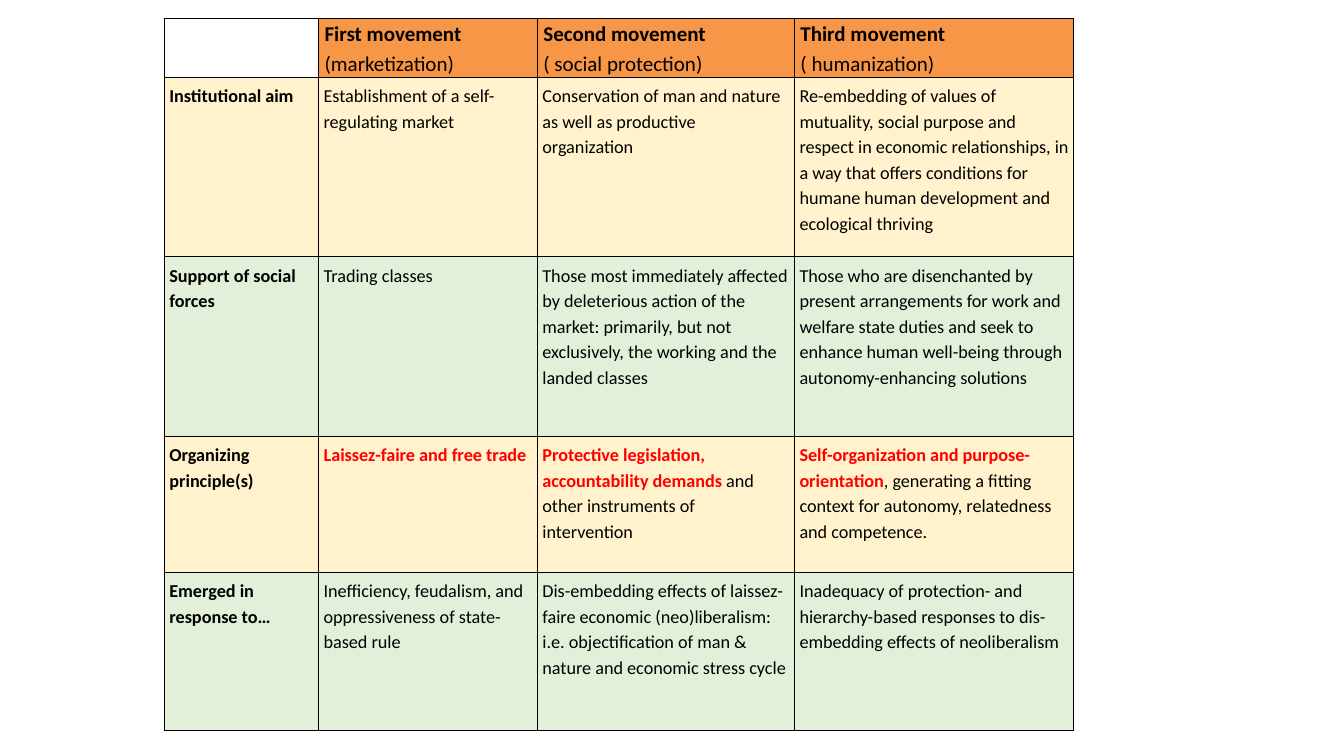
from lxml import etree
from pptx import Presentation
from pptx.dml.color import RGBColor
from pptx.oxml.ns import qn
from pptx.util import Inches, Pt

BLACK, RED, WHITE = "000000", "FF0000", "FFFFFF"
ORANGE, CREAM, GREEN = "F79646", "FFF2CC", "E2F0D9"

COLUMN_WIDTHS = [1.53, 2.17, 2.55, 2.77]
ROW_HEIGHTS = [0.58, 1.78, 1.78, 1.35, 1.57]

# Each header is a list of paragraphs; "|" parts the bold lead from the plain rest.
HEADERS = [
    ["First movement| (marketization)"],
    ["Second movement|", "|( social protection)"],
    ["Third movement|", "|( humanization)"],
]
ROWS = [
    ("Institutional aim|",
     "|Establishment of a self-regulating market",
     "|Conservation of man and nature as well as productive organization",
     "|Re-embedding of values of mutuality, social purpose and respect in economic "
     "relationships, in a way that offers conditions for humane human development "
     "and ecological thriving"),
    ("Support of social forces|",
     "|Trading classes",
     "|Those most immediately affected by deleterious action of the market: primarily, "
     "but not exclusively, the working and the landed classes",
     "|Those who are disenchanted by present arrangements for work and welfare state "
     "duties and seek to enhance human well-being through autonomy-enhancing solutions"),
    ("Organizing principle(s)|",
     "Laissez-faire and free trade|",
     "Protective legislation, accountability demands |and other instruments of intervention",
     "Self-organization and purpose-orientation|, generating a fitting context for "
     "autonomy, relatedness and competence."),
    ("Emerged in response to…|",
     "|Inefficiency, feudalism, and oppressiveness of state-based rule",
     "|Dis-embedding effects of laissez-faire economic (neo)liberalism: i.e. "
     "objectification of man & nature and economic stress cycle",
     "|Inadequacy of protection- and hierarchy-based responses to dis-embedding "
     "effects of neoliberalism"),
]


def rgb(value):
    return RGBColor.from_string(value)


class SlideBuilder:
    font = "Calibri"
    line_spacing = 1.15

    def __init__(self, slide):
        self.slide = slide

    def table(self, left, top, widths, heights):
        frame = self.slide.shapes.add_table(
            len(heights), len(widths), Inches(left), Inches(top),
            Inches(sum(widths)), Inches(sum(heights)))
        table = frame.table
        table.first_row = table.horz_banding = False
        for column, width in zip(table.columns, widths):
            column.width = Inches(width)
        for row, height in zip(table.rows, heights):
            row.height = Inches(height)
        return table

    def borders(self, cell, color=BLACK, width=1):
        tcPr = cell._tc.get_or_add_tcPr()
        for side in ("a:lnL", "a:lnR", "a:lnT", "a:lnB"):
            line = etree.SubElement(tcPr, qn(side), w=str(Pt(width)))
            fill = etree.SubElement(line, qn("a:solidFill"))
            etree.SubElement(fill, qn("a:srgbClr"), val=color)

    def cell(self, cell, fill, paragraphs=(), size=13, lead_color=BLACK, margins=(0.05, 0.05)):
        self.borders(cell)
        cell.fill.solid()
        cell.fill.fore_color.rgb = rgb(fill)
        cell.margin_left = cell.margin_right = Inches(margins[0])
        cell.margin_top = cell.margin_bottom = Inches(margins[1])
        tf = cell.text_frame
        for i, text in enumerate(paragraphs):
            p = tf.paragraphs[0] if i == 0 else tf.add_paragraph()
            p.line_spacing = self.line_spacing
            lead, rest = text.split("|")
            self.run(p, lead, size, lead_color, True)
            self.run(p, rest, size, BLACK, False)

    def run(self, p, text, size, color, bold):
        if not text:
            return
        r = p.add_run()
        r.text = text
        r.font.name = self.font
        r.font.size = Pt(size)
        r.font.bold = bold
        r.font.color.rgb = rgb(color)


def main():
    prs = Presentation()
    prs.slide_width, prs.slide_height = Inches(13.33), Inches(7.5)
    s = SlideBuilder(prs.slides.add_slide(prs.slide_layouts[6]))

    table = s.table(1.63, 0.18, COLUMN_WIDTHS, ROW_HEIGHTS)
    s.cell(table.cell(0, 0), WHITE)
    for col, header in enumerate(HEADERS, start=1):
        s.cell(table.cell(0, col), ORANGE, header, size=15, margins=(0.06, 0))
    for row, texts in enumerate(ROWS, start=1):
        fill = CREAM if row % 2 else GREEN
        for col, text in enumerate(texts):
            s.cell(table.cell(row, col), fill, [text], lead_color=RED if col else BLACK)

    prs.save("out.pptx")


if __name__ == "__main__":
    main()
